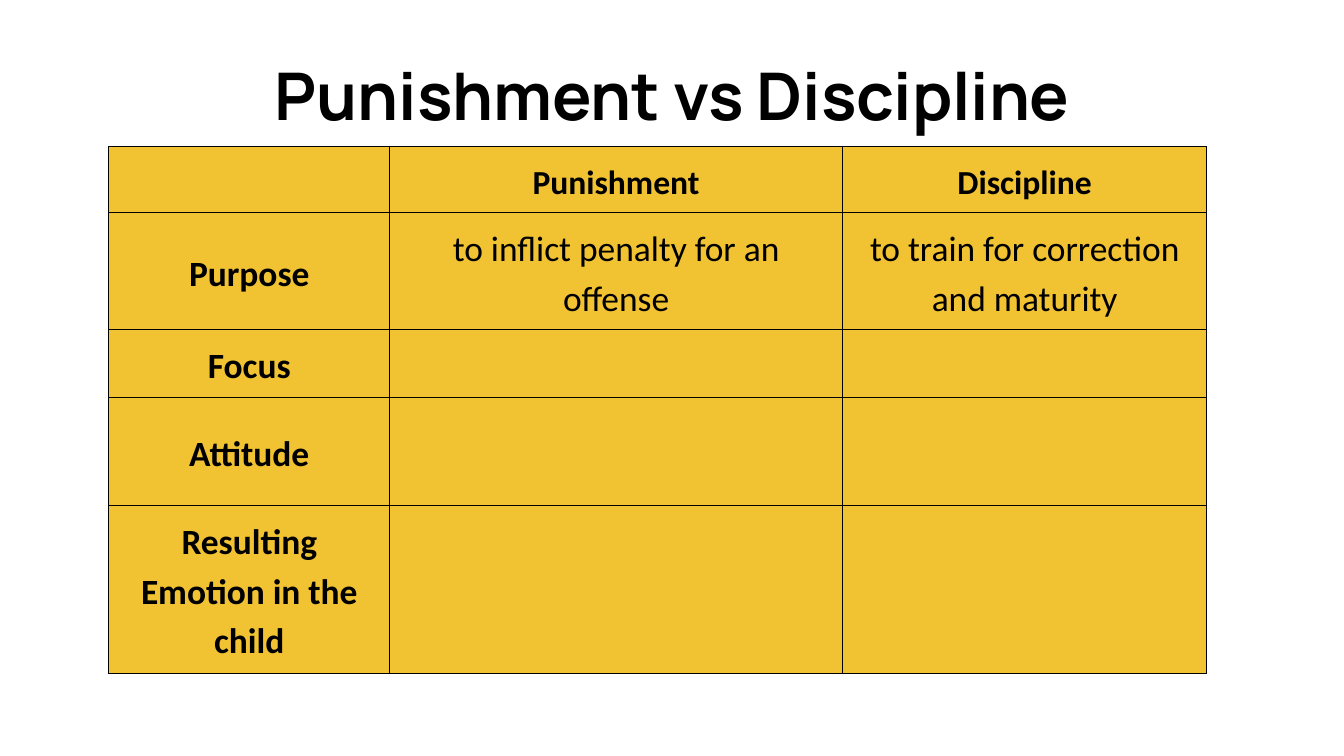
from pptx import Presentation
from pptx.util import Inches, Pt
from pptx.dml.color import RGBColor
from pptx.enum.text import PP_ALIGN as Align, MSO_ANCHOR as Anchor
from pptx.oxml import parse_xml
from pptx.oxml.ns import nsdecls

TITLE = "Punishment vs Discipline"
ROWS = [
    ("", "Punishment", "Discipline"),
    ("Purpose", "to inflict penalty for an offense", "to train for correction and maturity"),
    ("Focus", "", ""),
    ("Attitude", "", ""),
    ("Resulting Emotion in the child", "", ""),
]
WIDTHS = [2.09, 3.37, 2.71]
HEIGHTS = [0.49, 0.87, 0.51, 0.8, 1.25]
MIDDLE = {"Purpose", "Attitude"}
GOLD, BLACK = "F1C232", "000000"


def paint(text):
    return RGBColor.from_string(text)


def style(para, name, size, bold):
    para.alignment = Align.CENTER
    font = para.font
    font.name, font.size, font.bold = name, Pt(size), bold
    font.color.rgb = paint(BLACK)


def border(cell):
    props = cell._tc.get_or_add_tcPr()
    for i, side in enumerate(("lnL", "lnR", "lnT", "lnB")):
        props.insert(i, parse_xml(
            f'<a:{side} {nsdecls("a")} w="{Pt(0.75)}"><a:solidFill>'
            f'<a:srgbClr val="{BLACK}"/></a:solidFill></a:{side}>'))


def fill(cell, text, row, col):
    cell.fill.solid()
    cell.fill.fore_color.rgb = paint(GOLD)
    cell.margin_left = cell.margin_right = Inches(0.07)
    cell.margin_top = cell.margin_bottom = Inches(0.07)
    if text in MIDDLE:
        cell.vertical_anchor = Anchor.MIDDLE
    border(cell)
    if text:
        cell.text = text
        para = cell.text_frame.paragraphs[0]
        para.line_spacing = 1.15
        style(para, "Calibri", 19 if row else 18, row == 0 or col == 0)


deck = Presentation()
deck.slide_width, deck.slide_height = Inches(10), Inches(10 * 9 / 16)
slide = deck.slides.add_slide(deck.slide_layouts[6])

box = slide.shapes.add_textbox(Inches(0.34), Inches(0.31), Inches(9.32), Inches(0.77))
frame = box.text_frame
frame.word_wrap = True
frame.margin_left = frame.margin_right = Inches(0.1)
frame.margin_top = frame.margin_bottom = Inches(0.1)
frame.text = TITLE
style(frame.paragraphs[0], "Manrope", 35.2, True)

holder = slide.shapes.add_table(len(ROWS), len(WIDTHS), Inches(0.81), Inches(1.09),
                                Inches(sum(WIDTHS)), Inches(sum(HEIGHTS)))
table = holder.table
for col, width in zip(table.columns, WIDTHS):
    col.width = Inches(width)
for r, (texts, height) in enumerate(zip(ROWS, HEIGHTS)):
    table.rows[r].height = Inches(height)
    for c, text in enumerate(texts):
        fill(table.cell(r, c), text, r, c)

deck.save("out.pptx")
